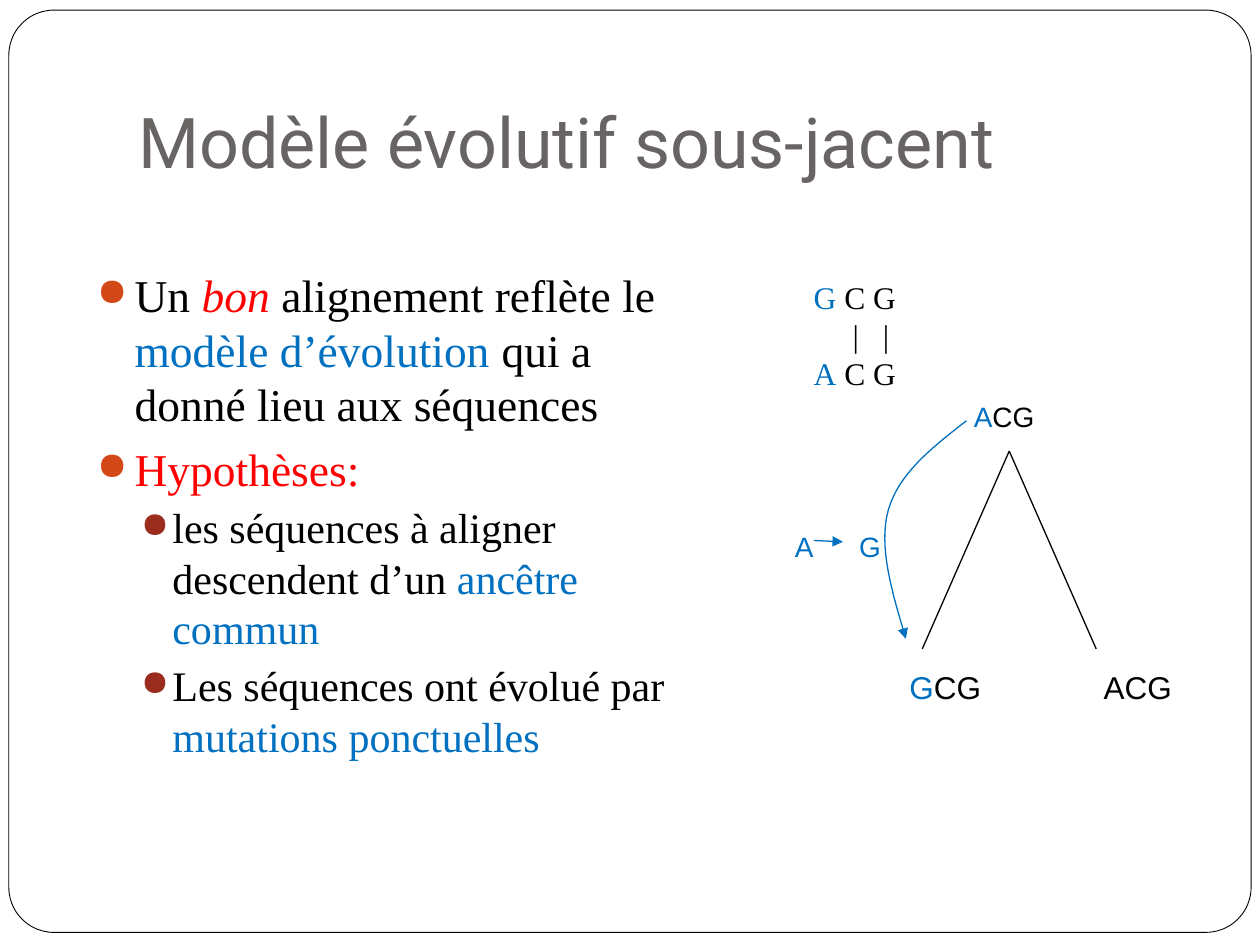
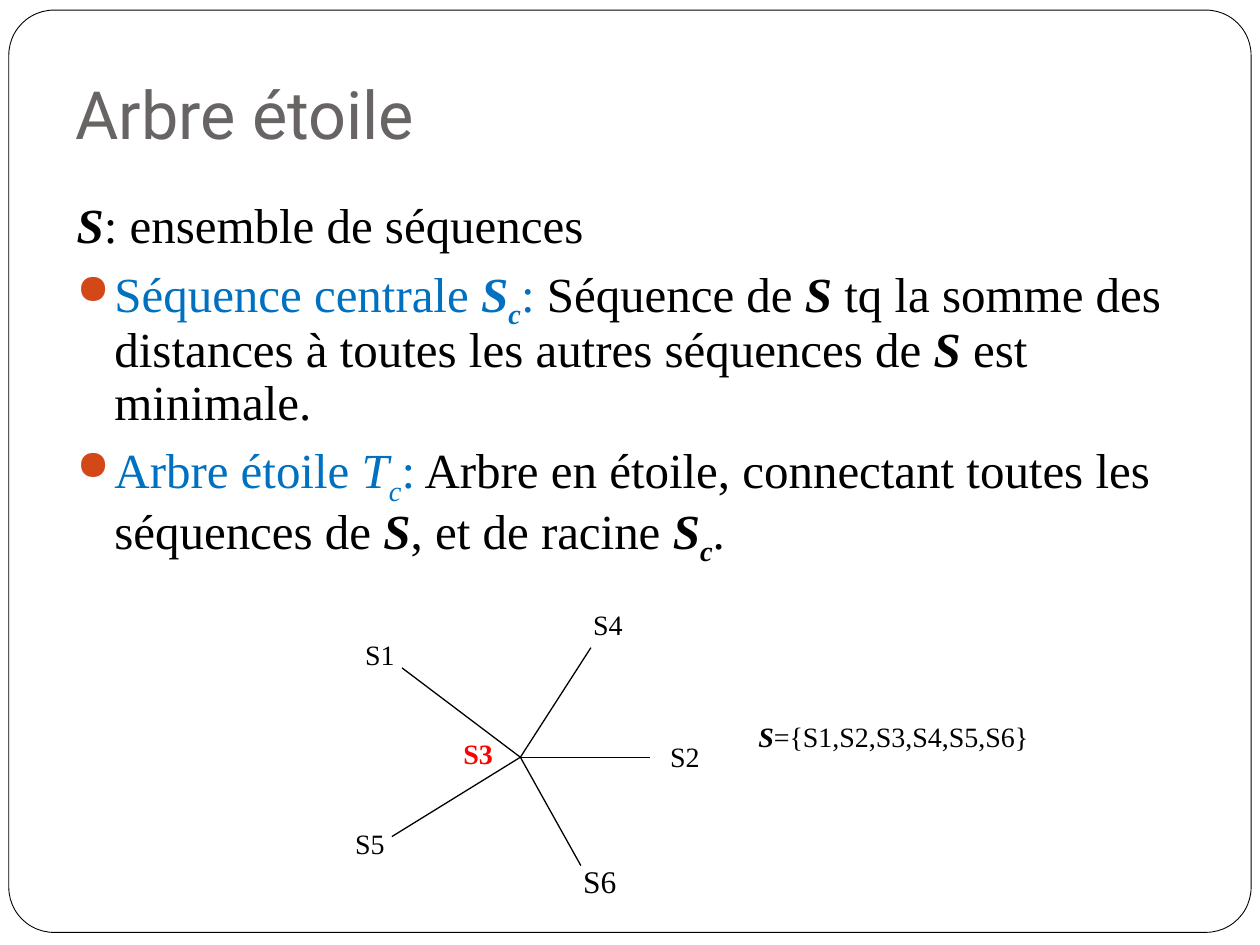
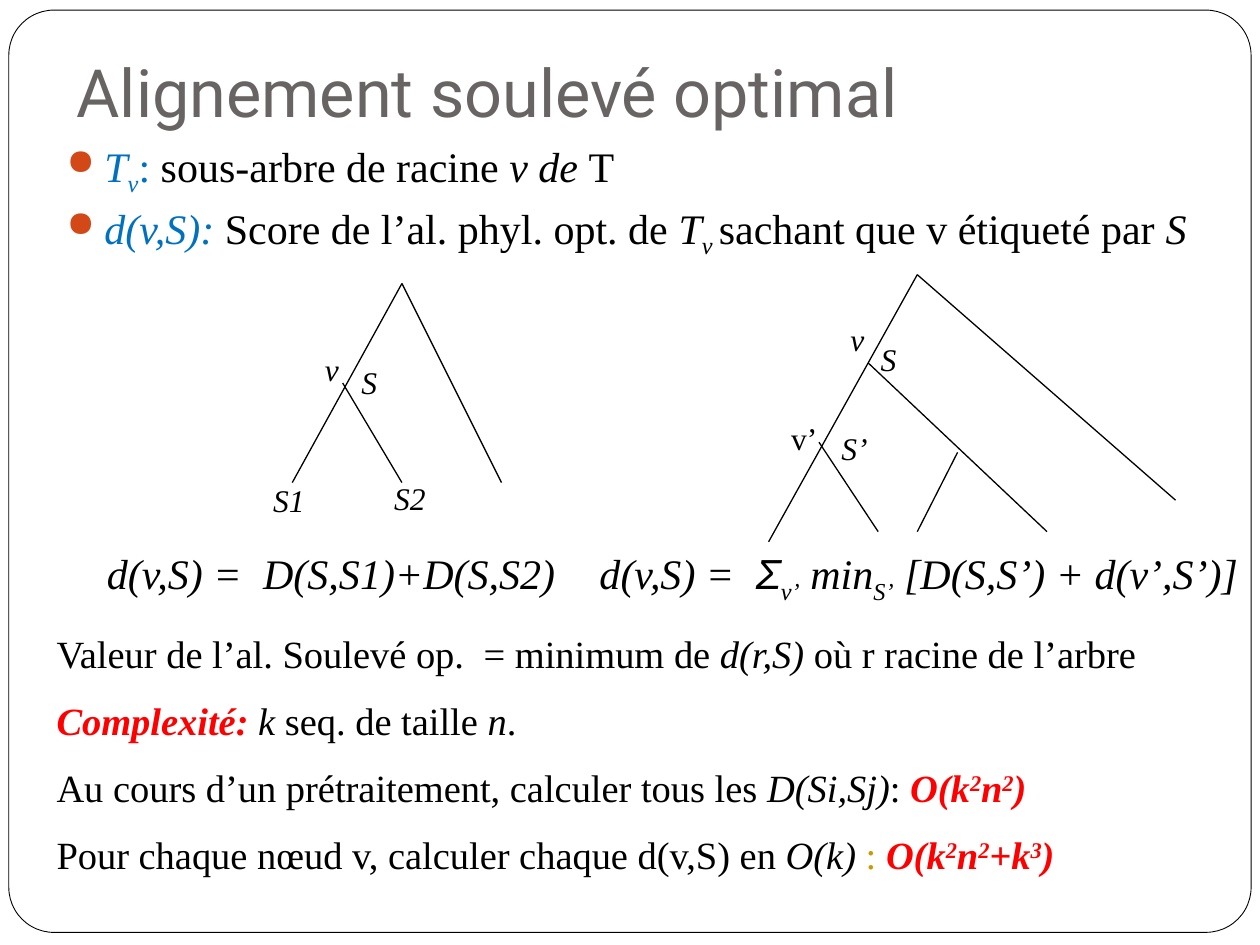
from lxml import etree
from pptx import Presentation
from pptx import util as u
from pptx.dml.color import RGBColor
from pptx.enum import shapes, text
from pptx.oxml.ns import qn

EMU_PER_PX = 9144  # 100 px to the inch
COLORS = {
    "black": "000000", "white": "FFFFFF", "title": "696464", "blue": "0070C0",
    "red": "FF0000", "gold": "CC9900", "bullet": "D34817", "subbullet": "9B2D1F",
}
SERIF, SANS, HEADING = "Times New Roman", "Arial", "Roboto"
SHIFTS = {"sub": "-25000", "sup": "30000"}
RED_MATH = "red bold italic"


def px(value):
    return round(value * EMU_PER_PX)


def rgb(name):
    return RGBColor.from_string(COLORS[name])


# ---- Text ----

def write_spans(para, spans, size, font=SERIF):
    """Each span is plain text or (text, words for colour, weight, shift)."""
    for item in spans:
        words, style = (item, "") if isinstance(item, str) else item
        marks = style.split()
        span = para.add_run()
        span.text = words
        span.font.size = u.Pt(size)
        span.font.name = SANS if "sans" in marks else font
        span.font.bold = "bold" in marks
        span.font.italic = "italic" in marks
        span.font.color.rgb = rgb(next((m for m in marks if m in COLORS), "black"))
        for mark in marks:
            if mark in SHIFTS:
                span.font._element.set("baseline", SHIFTS[mark])


def add_bullet(para, level):
    props = para._p.get_or_add_pPr()
    props.set("marL", str(px(30 + 30 * level)))
    props.set("indent", str(px(-25 if level else -30)))
    color = etree.SubElement(props, qn("a:buClr"))
    shade = COLORS["subbullet" if level else "bullet"]
    etree.SubElement(color, qn("a:srgbClr"), val=shade)
    etree.SubElement(props, qn("a:buSzPct"), val="85000")
    etree.SubElement(props, qn("a:buChar"), char="●")


def add_tabs(para, stops):
    tabs = etree.SubElement(para._p.get_or_add_pPr(), qn("a:tabLst"))
    for stop in stops:
        etree.SubElement(tabs, qn("a:tab"), pos=str(px(stop)), algn="l")


def add_box(page, left, top, width, height, wrap=True):
    box = page.shapes.add_textbox(px(left), px(top), px(width), px(height))
    box.text_frame.word_wrap = wrap
    return box.text_frame


def next_para(frame, index):
    return frame.add_paragraph() if index else frame.paragraphs[0]


def add_title(page, words, left, top, width, height, size=38):
    frame = add_box(page, left, top, width, height)
    frame.vertical_anchor = text.MSO_ANCHOR.BOTTOM
    frame.margin_bottom = px(10)
    write_spans(frame.paragraphs[0], [(words, "title")], size, HEADING)


def add_body(page, left, top, width, height, rows, sizes, spacing=1.0):
    """Each row is (level, spans); level None has no bullet."""
    frame = add_box(page, left, top, width, height)
    for index, (level, spans) in enumerate(rows):
        para = next_para(frame, index)
        para.level = level or 0
        para.line_spacing = spacing
        para.space_before = u.Pt(3.7 if level else 5.8)
        if level is not None:
            add_bullet(para, level)
        write_spans(para, spans, sizes[level or 0])


def add_label(page, left, top, width, spans, size=18, font=SERIF, tabs=()):
    frame = add_box(page, left, top, width, round(size * 5 / 3) + 10, wrap=False)
    frame.auto_size = text.MSO_AUTO_SIZE.SHAPE_TO_FIT_TEXT
    para = frame.paragraphs[0]
    if tabs:
        add_tabs(para, tabs)
    write_spans(para, spans, size, font)


# ---- Lines ----

def style_line(shape, color, arrow):
    shape.line.color.rgb = rgb(color)
    shape.line.width = u.Pt(0.75)
    if arrow:
        etree.SubElement(shape.line._get_or_add_ln(), qn("a:tailEnd"), type="triangle")


def add_line(page, start, end, color="black", arrow=False):
    line = page.shapes.add_connector(
        shapes.MSO_CONNECTOR.STRAIGHT, *(px(v) for v in (*start, *end)))
    style_line(line, color, arrow)
    etree.SubElement(line._element.spPr, qn("a:effectLst"))


def add_lines(page, start, ends):
    for end in ends:
        add_line(page, start, end)


def bezier(points, steps=16):
    """Points along a cubic curve, its start left out."""
    for step in range(1, steps + 1):
        t = step / steps
        weights = ((1 - t) ** 3, 3 * t * (1 - t) ** 2, 3 * t * t * (1 - t), t ** 3)
        yield tuple(px(sum(w * p[axis] for w, p in zip(weights, points)))
                    for axis in (0, 1))


def add_curved_arrow(page, points, color):
    builder = page.shapes.build_freeform(px(points[0][0]), px(points[0][1]))
    for first in range(0, len(points) - 1, 3):
        builder.add_line_segments(list(bezier(points[first:first + 4])), close=False)
    curve = builder.convert_to_shape()
    curve.shadow.inherit = False
    curve.fill.background()
    style_line(curve, color, arrow=True)


# ---- Slides ----

def new_page(deck):
    page = deck.slides.add_slide(deck.slide_layouts[6])
    frame = page.shapes.add_shape(
        shapes.MSO_SHAPE.ROUNDED_RECTANGLE, px(7), px(8), px(986), px(732))
    frame.adjustments[0] = 0.049
    frame.shadow.inherit = False
    frame.fill.solid()
    frame.fill.fore_color.rgb = rgb("white")
    frame.line.color.rgb = rgb("black")
    frame.line.width = u.Pt(0.5)
    return page


def build_evolution(deck):
    page = new_page(deck)
    add_title(page, "Modèle évolutif sous-jacent", 100, 30, 850, 125, size=40)
    add_body(page, 67, 207, 504, 498, [
        (0, ["Un ", ("bon", "red italic"), " alignement reflète le ",
             ("modèle d’évolution ", "blue"), "qui a donné lieu aux séquences"]),
        (0, [("Hypothèses:", "red")]),
        (1, ["les séquences à aligner descendent d’un ", ("ancêtre commun", "blue")]),
        (1, ["Les séquences ont évolué par ", ("mutations ponctuelles", "blue")]),
    ], sizes=(26, 24))

    # Ancestor and its two descendants
    add_lines(page, (801, 358), [(870, 515), (732, 515)])
    add_label(page, 763, 312, 68, [("A", "blue"), "CG"], 16, SANS)
    add_label(page, 712, 525, 77, [("G", "blue"), "CG"], 18, SANS)
    add_label(page, 866, 525, 75, ["ACG"], 18, SANS)

    # Mutation from A to G
    add_curved_arrow(page, [(767, 334), (740, 355), (713, 376), (705, 405),
                            (697, 434), (708, 470), (719, 507)], "blue")
    for letter, left in (("A", 621), ("G", 672)):
        add_label(page, left, 415, 37, [(letter, "blue")], 16, SANS)
    add_line(page, (646, 429), (669, 430), "blue", arrow=True)

    # Aligned pair
    pair = add_box(page, 636, 216, 103, 100)
    rows = [[("G", "blue"), " C G"], ["\t|\t|"], [("A", "blue"), " C G"]]
    for index, spans in enumerate(rows):
        para = next_para(pair, index)
        add_tabs(para, (31, 55))
        write_spans(para, spans, 18)


def build_star_tree(deck):
    page = new_page(deck)
    add_title(page, "Arbre étoile", 50, 30, 900, 101)
    set_s = ("S", "bold italic")
    add_body(page, 51, 155, 891, 284, [
        (None, [set_s, ": ensemble de séquences"]),
        (0, [("Séquence centrale ", "blue"), ("S", "blue bold italic"),
             ("c", "blue bold italic sub"), (": ", "blue"), "Séquence de ",
             ("S ", "bold italic"),
             "tq la somme des distances à toutes les autres séquences de ",
             set_s, " est minimale."]),
        (0, [("Arbre étoile ", "blue"), ("T", "blue italic"),
             ("c", "blue italic sub"), (":", "blue"),
             " Arbre en étoile, connectant toutes les séquences de ", set_s,
             ", et de racine ", set_s, ("c", "bold italic sub"), "."]),
    ], sizes=(28,), spacing=0.9)

    # Star around S3
    add_lines(page, (413, 601),
              [(319, 530), (311, 664), (461, 687), (469, 514), (516, 601)])
    for name, left, top in (("S1", 280, 501), ("S2", 522, 582),
                            ("S4", 461, 477), ("S5", 272, 651)):
        add_label(page, left, top, 44, [name], 16)
    add_label(page, 358, 580, 44, [("S3", "red bold")], 16)
    add_label(page, 453, 679, 47, ["S6"])
    add_label(page, 592, 566, 235, [set_s, "={S1,S2,S3,S4,S5,S6}"], 16)


def build_lifted_alignment(deck):
    page = new_page(deck)
    add_title(page, "Alignement soulevé optimal", 51, 21, 900, 93)
    add_body(page, 43, 107, 921, 126, [
        (0, [("T", "blue italic"), ("v", "blue italic sub"), (": ", "blue"),
             "sous-arbre de racine ", ("v de ", "italic"), "T"]),
        (0, [("d(v,S): ", "blue italic"), "Score de l’al. phyl. opt. de ",
             ("T", "italic"), ("v ", "italic sub"),
             "sachant que v étiqueté par ", ("S", "italic")]),
    ], sizes=(24,), spacing=0.9)

    # Left tree, then right tree
    add_lines(page, (319, 225), [(232, 383), (398, 383)])
    add_line(page, (272, 304), (319, 383))
    add_lines(page, (728, 218), [(610, 430), (933, 397)])
    add_line(page, (650, 351), (697, 422))
    add_line(page, (689, 288), (831, 422))
    add_line(page, (760, 359), (728, 422))
    for name, left, top, width in (
            ("v", 248, 273, 31), ("S", 277, 283, 33), ("S1", 207, 377, 45),
            ("S2", 303, 375, 45), ("v", 665, 249, 31), ("S", 689, 265, 33),
            ("S’", 658, 336, 41)):
        add_label(page, left, top, width, [(name, "italic")])
    add_label(page, 618, 328, 41, ["v’"])

    # Recurrences
    add_label(page, 75, 430, 378, [("d(v,S) =\tD(S,S1)+D(S,S2)", "italic")],
              24, tabs=(124,))
    add_label(page, 466, 430, 534, [
        ("d(v,S) =\t", "italic"), ("Σ", "italic sans"), ("v’", "italic sub"),
        (" min", "italic"), ("S’", "italic sub"),
        (" [D(S,S’) + d(v’,S’)]", "italic")], 24, tabs=(124,))

    # Value and complexity
    power_two = ("2", RED_MATH + " sup")
    squares = [("O(k", RED_MATH), power_two, ("n", RED_MATH), power_two]
    notes = [
        ["Valeur de l’al. Soulevé op.\t= minimum de ", ("d(r,S)", "italic"),
         " où r racine de l’arbre"],
        [("Complexité: ", RED_MATH), ("k ", "italic"), "seq. de taille ",
         ("n", "italic"), "."],
        ["Au cours d’un prétraitement, calculer tous les ",
         ("D(Si,Sj)", "italic"), ": ", *squares, (")", RED_MATH)],
        ["Pour chaque nœud v, calculer chaque d(v,S) en ", ("O(k) ", "italic"),
         (": ", "gold"), *squares, ("+k", RED_MATH), ("3", RED_MATH + " sup"),
         (")", RED_MATH)],
    ]
    frame = add_box(page, 35, 495, 929, 212)
    for index, spans in enumerate(notes):
        para = next_para(frame, index)
        para.space_after = u.Pt(12)
        add_tabs(para, (339,))
        write_spans(para, spans, 22)


def main():
    deck = Presentation()
    deck.slide_width, deck.slide_height = px(1000), px(750)
    build_evolution(deck)
    build_star_tree(deck)
    build_lifted_alignment(deck)
    deck.save("out.pptx")


if __name__ == "__main__":
    main()
